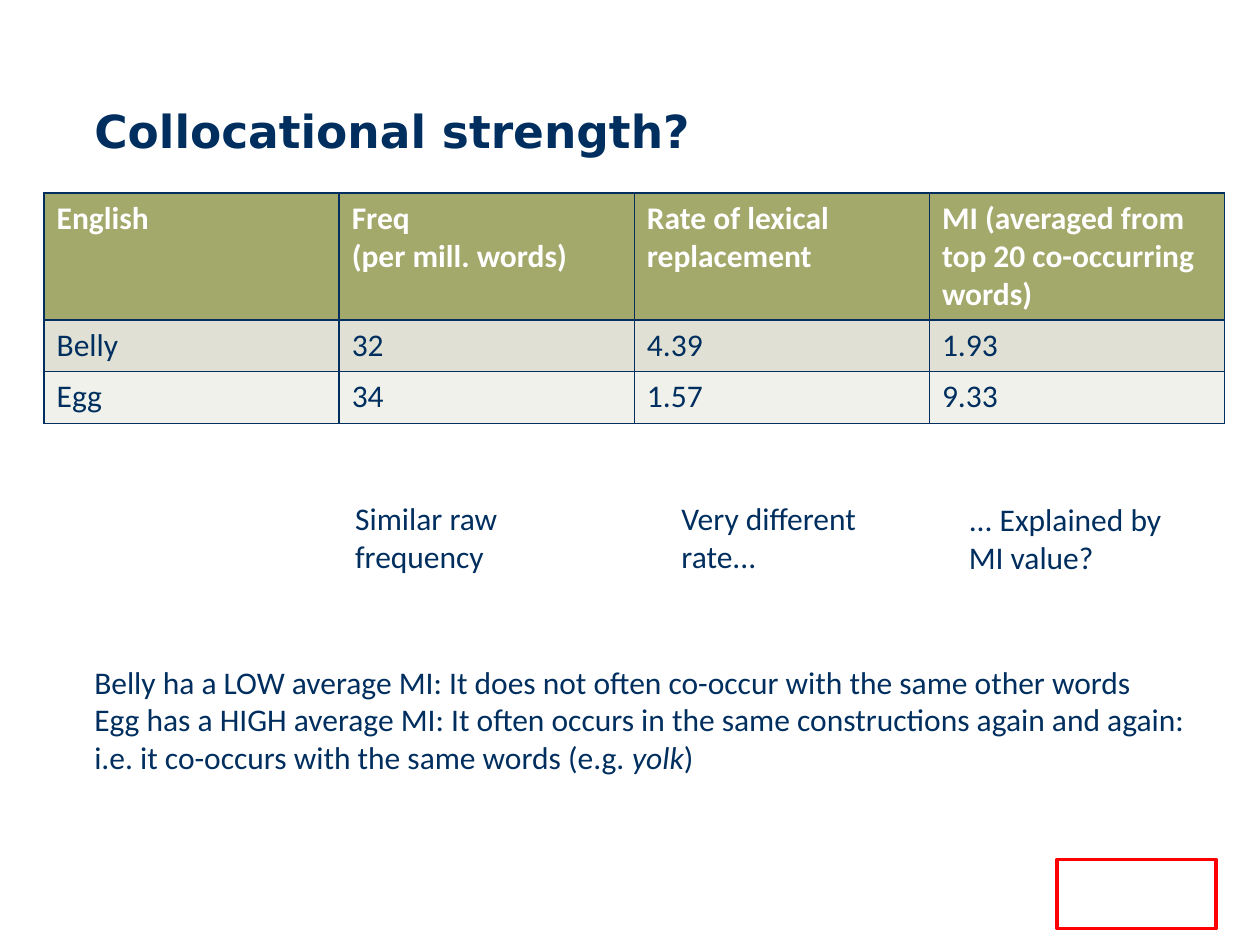
from lxml.etree import SubElement
from pptx import Presentation
from pptx.dml.color import RGBColor
from pptx.enum.shapes import MSO_SHAPE
from pptx.enum.text import MSO_ANCHOR
from pptx.oxml.ns import qn
from pptx.util import Inches, Pt

NAVY = "002F5F"
WHITE = "FFFFFF"
RED = "FF0000"
ROW_FILLS = ["A3A86B", "E0E1D4", "F0F1EB"]
COLLOCATIONS = [
    ["English", "Freq\v(per mill. words)", "Rate of lexical replacement",
     "MI (averaged from top 20 co-occurring words)"],
    ["Belly", "32", "4.39", "1.93"],
    ["Egg", "34", "1.57", "9.33"],
]
REMARKS = [
    (2.72, 3.91, "Similar raw frequency"),
    (5.31, 3.91, "Very different rate..."),
    (7.59, 3.92, "... Explained by MI value?"),
]
CONCLUSION = [
    "Belly ha a LOW average MI: It does not often co-occur with the same other words",
    "Egg has a HIGH average MI: It often occurs in the same constructions again and again:",
    "i.e. it co-occurs with the same words (e.g. *yolk*)",
]


def color(hex_string):
    return RGBColor.from_string(hex_string)


def write(frame, *lines, size=18, font="Calibri", ink=NAVY, bold=False):
    for number, line in enumerate(lines):
        paragraph = frame.add_paragraph() if number else frame.paragraphs[0]
        for position, piece in enumerate(line.split("*")):
            for part_number, part in enumerate(piece.split("\v")):
                if part_number:
                    paragraph.add_line_break()
                run = paragraph.add_run()
                run.text = part
                run.font.size = Pt(size)
                run.font.name = font
                run.font.bold = bold
                run.font.italic = position % 2 == 1
                run.font.color.rgb = color(ink)


def add_text(slide, left, top, width, height, *lines, wrap=True,
             anchor=MSO_ANCHOR.TOP, **style):
    box = slide.shapes.add_textbox(
        Inches(left), Inches(top), Inches(width), Inches(height))
    box.text_frame.word_wrap = wrap
    box.text_frame.vertical_anchor = anchor
    write(box.text_frame, *lines, **style)


def paint_cell(cell, fill):
    properties = cell._tc.get_or_add_tcPr()
    for side in ("a:lnL", "a:lnR", "a:lnT", "a:lnB"):
        border = SubElement(properties, qn(side), w=str(Pt(1)))
        solid = SubElement(border, qn("a:solidFill"))
        SubElement(solid, qn("a:srgbClr"), val=NAVY)
    cell.fill.solid()
    cell.fill.fore_color.rgb = color(fill)


def add_collocation_table(slide):
    table = slide.shapes.add_table(
        len(COLLOCATIONS), len(COLLOCATIONS[0]), Inches(0.35), Inches(1.53),
        Inches(9.37), Inches(1.81)).table
    for row_number, (values, fill) in enumerate(zip(COLLOCATIONS, ROW_FILLS)):
        header = row_number == 0
        table.rows[row_number].height = Inches(1.01 if header else 0.41)
        for column_number, value in enumerate(values):
            cell = table.cell(row_number, column_number)
            paint_cell(cell, fill)
            write(cell.text_frame, value, ink=WHITE if header else NAVY,
                  bold=header)


def add_frame(slide, left, top, width, height):
    frame = slide.shapes.add_shape(
        MSO_SHAPE.RECTANGLE, Inches(left), Inches(top), Inches(width),
        Inches(height))
    frame.shadow.inherit = False
    frame.fill.background()
    frame.line.color.rgb = color(RED)
    frame.line.width = Pt(2)


def main():
    deck = Presentation()
    deck.slide_width = Inches(10)
    deck.slide_height = Inches(7.5)
    slide = deck.slides.add_slide(deck.slide_layouts[6])

    add_text(slide, 0.65, 0.43, 8.69, 0.87, "Collocational strength?",
             anchor=MSO_ANCHOR.BOTTOM, size=26, font="DejaVu Sans", bold=True)
    add_frame(slide, 8.39, 6.82, 1.26, 0.55)
    add_collocation_table(slide)
    for left, top, remark in REMARKS:
        add_text(slide, left, top, 2.05, 0.71, remark)
    add_text(slide, 0.65, 5.21, 8.97, 1.01, *CONCLUSION, wrap=False)
    deck.save("out.pptx")


if __name__ == "__main__":
    main()
